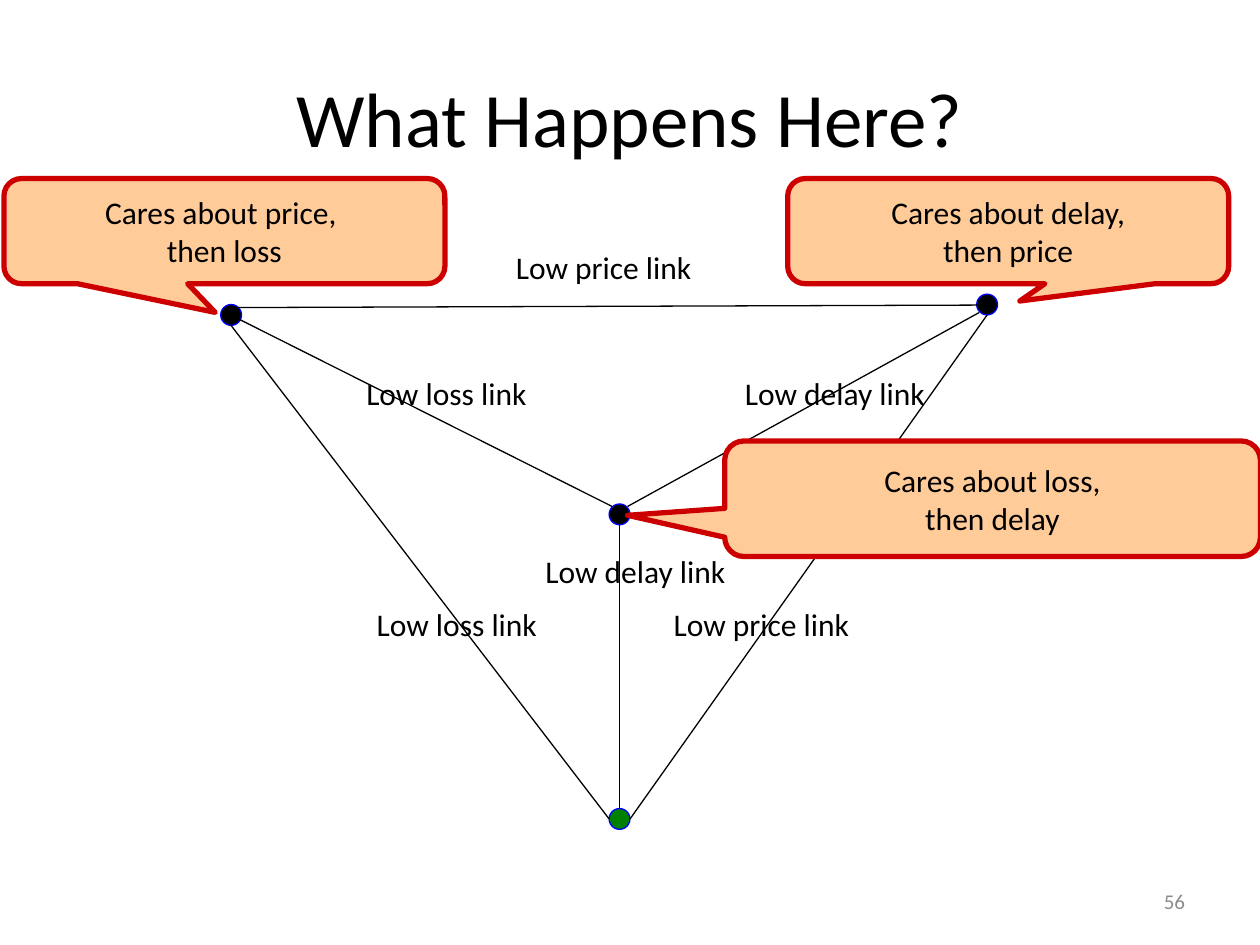
from typing import NamedTuple

from pptx import Presentation
from pptx.dml.color import RGBColor
from pptx.enum.shapes import MSO_CONNECTOR, MSO_SHAPE
from pptx.enum.text import MSO_ANCHOR as ANCHOR, PP_ALIGN as ALIGN
from pptx.oxml.ns import qn
from pptx.util import Cm, Pt
from lxml import etree

FONT = "Calibri"
BLACK, BLUE, GREEN = "000000", "0000FF", "008000"
PEACH, RED, GREY = "FFCC99", "CC0000", "8C8C8C"
NODE_SIZE = 0.42
LABEL_SIZE = (8.26, 1.12)


# All positions and sizes below are in centimetres
class Node(NamedTuple):
    x: float
    y: float
    fill: str = BLACK


class Link(NamedTuple):
    x1: float
    y1: float
    x2: float
    y2: float


class Label(NamedTuple):
    x: float
    y: float
    text: str


class Callout(NamedTuple):
    x: float
    y: float
    w: float
    h: float
    tip_x: float
    tip_y: float
    text: str


NODES = [
    Node(4.45, 6.14),
    Node(12.28, 10.16),
    Node(19.69, 5.93),
    Node(12.28, 16.3, GREEN),
]
LINKS = [
    Link(4.65, 6.35, 12.34, 10.21),
    Link(4.8, 6.2, 19.74, 6.15),
    Link(12.65, 10.21, 19.74, 6.3),
    Link(12.49, 10.36, 12.49, 16.3),
    Link(4.65, 6.55, 12.28, 16.51),
    Link(19.9, 6.35, 12.7, 16.51),
]
LABELS = [
    Label(8.04, 4.87, "Low price link"),
    Label(5.08, 12.07, "Low loss link"),
    Label(12.7, 7.41, "Low delay link"),
    Label(4.87, 7.41, "Low loss link"),
    Label(8.68, 11.01, "Low delay link"),
    Label(11.22, 12.07, "Low price link"),
]
CALLOUTS = [
    Callout(0.08, 3.6, 8.89, 2.12, 4.34, 6.3, "Cares about price, \nthen loss"),
    Callout(15.88, 3.6, 8.89, 2.12, 20.56, 6.07, "Cares about delay,\nthen price"),
    Callout(14.61, 8.89, 10.8, 2.33, 12.65, 10.39, "Cares about loss,\nthen delay"),
]


def rgb(value: str) -> RGBColor:
    return RGBColor.from_string(value)


def write(sp, text: str, size: float = 18, color: str = BLACK,
          align=ALIGN.CENTER, anchor=ANCHOR.TOP, wrap: bool = True) -> None:
    tf = sp.text_frame
    tf.text = text
    tf.word_wrap = wrap
    tf.vertical_anchor = anchor
    for p in tf.paragraphs:
        p.alignment = align
        for r in p.runs:
            r.font.name = FONT
            r.font.size = Pt(size)
            r.font.color.rgb = rgb(color)


def paint(sp, fill: str, line: str, width: float) -> None:
    sp.shadow.inherit = False
    sp.fill.solid()
    sp.fill.fore_color.rgb = rgb(fill)
    sp.line.color.rgb = rgb(line)
    sp.line.width = Pt(width)


def draw_node(shapes, node: Node) -> None:
    sp = shapes.add_shape(MSO_SHAPE.OVAL, Cm(node.x), Cm(node.y),
                          Cm(NODE_SIZE), Cm(NODE_SIZE))
    paint(sp, node.fill, BLUE, 0.75)


def draw_link(shapes, link: Link) -> None:
    line = shapes.add_connector(MSO_CONNECTOR.STRAIGHT, *map(Cm, link))
    line.line.color.rgb = rgb(BLACK)
    line.line.width = Pt(0.75)
    etree.SubElement(line._element.spPr, qn("a:effectLst"))


def draw_label(shapes, label: Label) -> None:
    sp = shapes.add_textbox(Cm(label.x), Cm(label.y), *map(Cm, LABEL_SIZE))
    write(sp, label.text)


def draw_callout(shapes, c: Callout) -> None:
    sp = shapes.add_shape(MSO_SHAPE.ROUNDED_RECTANGULAR_CALLOUT,
                          Cm(c.x), Cm(c.y), Cm(c.w), Cm(c.h))
    # The tip is given as an offset from the centre, relative to the size
    sp.adjustments[0] = (c.tip_x - c.x) / c.w - 0.5
    sp.adjustments[1] = (c.tip_y - c.y) / c.h - 0.5
    paint(sp, PEACH, RED, 3)
    write(sp, c.text, anchor=ANCHOR.MIDDLE, wrap=False)


def main() -> None:
    prs = Presentation()
    prs.slide_width, prs.slide_height = Cm(25.4), Cm(19.05)
    slide = prs.slides.add_slide(prs.slide_layouts[5])
    shapes = slide.shapes

    # Title
    title = shapes.title
    title.left, title.top = Cm(1.27), Cm(0.76)
    title.width, title.height = Cm(22.86), Cm(3.18)
    write(title, "What Happens Here?", 44, anchor=ANCHOR.MIDDLE)

    # Network and its link labels
    for node in NODES:
        draw_node(shapes, node)
    for link in LINKS:
        draw_link(shapes, link)
    for label in LABELS:
        draw_label(shapes, label)

    # Preferences of each node
    for callout in CALLOUTS:
        draw_callout(shapes, callout)

    # Page number
    number = shapes.add_textbox(Cm(18.21), Cm(17.65), Cm(5.93), Cm(1.02))
    write(number, "56", 12, GREY, ALIGN.RIGHT, ANCHOR.MIDDLE)

    prs.save("out.pptx")


if __name__ == "__main__":
    main()
